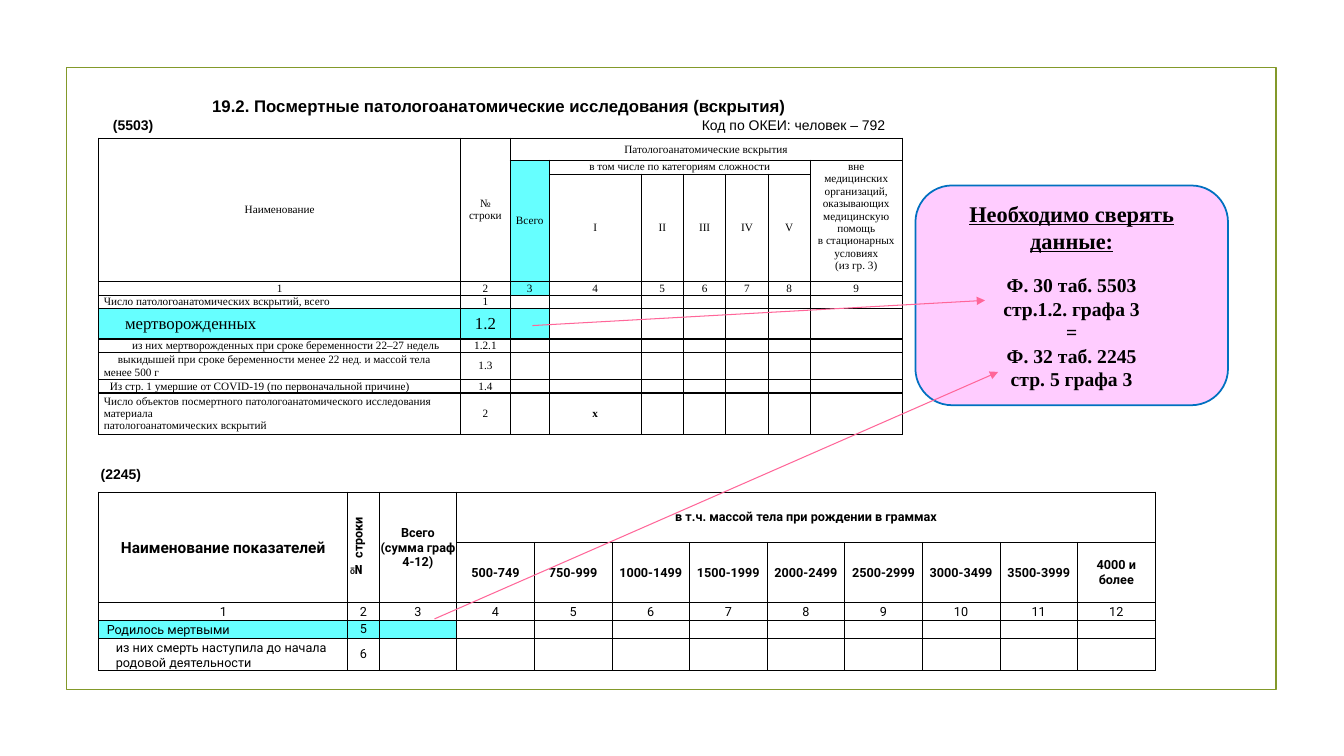
from pptx import Presentation
from pptx.dml.color import RGBColor
from pptx.enum.shapes import MSO_CONNECTOR, MSO_SHAPE
from pptx.enum.text import MSO_ANCHOR, PP_ALIGN
from pptx.oxml import parse_xml
from pptx.oxml.ns import nsdecls
from pptx.util import Inches, Pt

LEFT, CENTER = PP_ALIGN.LEFT, PP_ALIGN.CENTER
TOP, MIDDLE, BOTTOM = MSO_ANCHOR.TOP, MSO_ANCHOR.MIDDLE, MSO_ANCHOR.BOTTOM
RECTANGLE, ROUNDED = MSO_SHAPE.RECTANGLE, MSO_SHAPE.ROUNDED_RECTANGLE
STRAIGHT = MSO_CONNECTOR.STRAIGHT
BLACK, CYAN, PINK, ROSE = "000000", "66FFFF", "FFCCFF", "FF6699"
BLUE, OLIVE = "0070C0", "83992A"
SERIF, SANS, TABLE_SANS = "Times New Roman", "Arial", "Roboto"


def color(value):
    return RGBColor.from_string(value)


def add_element(parent, xml):
    tag, rest = xml[1:].split(" ", 1)
    parent.append(parse_xml(f"<{tag} {nsdecls('a')} {rest}"))


def write(para, text, size=8, font=SERIF, bold=False, underline=False,
          align=CENTER, indent=0, left=0, before=0):
    """Add one span of text to a paragraph and format both."""
    para.alignment = align
    if before:
        para.space_before = Pt(before)
    if indent or left:
        properties = para._p.get_or_add_pPr()
        properties.set("marL", str(Inches(left)))
        properties.set("indent", str(Inches(indent)))
    if not text:
        add_element(para._p, f'<a:endParaRPr sz="{size * 100}"/>')
        return
    span = para.add_run()
    span.text = text
    span.font.size, span.font.name = Pt(size), font
    span.font.bold, span.font.underline = bold, underline
    span.font.color.rgb = color(BLACK)


def add_text_box(page, box, wrap=True, insets=(0.1, 0.1)):
    frame = page.shapes.add_textbox(*map(Inches, box)).text_frame
    frame.word_wrap = wrap
    frame.vertical_anchor = MIDDLE
    frame.margin_left, frame.margin_right = map(Inches, insets)
    return frame


def add_panel(page, kind, box, line, fill=None):
    panel = page.shapes.add_shape(kind, *map(Inches, box))
    panel.shadow.inherit = False
    panel.line.color.rgb = color(line)
    panel.line.width = Pt(1.25)
    if fill:
        panel.fill.solid()
        panel.fill.fore_color.rgb = color(fill)
    else:
        panel.fill.background()
    return panel


def add_grid(page, origin, columns, rows, texts, merges, filled, styles,
             base, insets, border):
    """Draw a bordered table; styles override base by (row, column)."""
    box = (*origin, sum(columns), sum(rows))
    table = page.shapes.add_table(len(rows), len(columns), *map(Inches, box)).table
    table.first_row = table.horz_banding = False
    for column, width in zip(table.columns, columns):
        column.width = Inches(width)
    for row, height in zip(table.rows, rows):
        row.height = Inches(height)
    for r in range(len(rows)):
        for c in range(len(columns)):
            cell = table.cell(r, c)
            style = {**base, **styles.get((r, c), {})}
            cell.vertical_anchor = style.pop("anchor", MIDDLE)
            (cell.margin_left, cell.margin_top,
             cell.margin_right, cell.margin_bottom) = map(Inches, insets)
            properties = cell._tc.get_or_add_tcPr()
            if style.pop("vertical", False):
                properties.set("vert", "vert270")
            for side in "LRTB":
                add_element(properties, f'<a:ln{side} w="{Pt(border)}"><a:solidFill>'
                            f'<a:srgbClr val="{BLACK}"/></a:solidFill></a:ln{side}>')
            if (r, c) in filled:
                cell.fill.solid()
                cell.fill.fore_color.rgb = color(CYAN)
            else:
                cell.fill.background()
            frame = cell.text_frame
            for number, text in enumerate(texts.get((r, c), "").split("\n")):
                para = frame.add_paragraph() if number else frame.paragraphs[0]
                write(para, text, **style)
    for first, last in merges:
        table.cell(*first).merge(table.cell(*last))


def row_texts(row, start, values):
    return {(row, start + n): str(value) for n, value in enumerate(values)}


def draw_heading(page, box):
    frame = add_text_box(page, box, insets=(0.14, 0.17))
    write(frame.paragraphs[0], "19.2. Посмертные патологоанатомические исследования (вскрытия)",
          size=12, font=SANS, bold=True)
    para = frame.add_paragraph()
    add_element(para._p.get_or_add_pPr(),
                f'<a:tabLst ><a:tab pos="{Inches(box[2] - 0.31)}" algn="r"/></a:tabLst>')
    write(para, "(5503)", size=10, font=SANS, bold=True, align=LEFT)
    write(para, "\tКод по ОКЕИ: человек – 792", size=10, font=SANS, align=LEFT)


def draw_autopsy_table(page, origin):
    columns = [3.59, 0.49, 0.39, 0.91] + [0.42] * 4 + [0.91]
    rows = [0.22, 0.14, 1.06, 0.14, 0.13, 0.3, 0.13, 0.27, 0.13, 0.41]
    names = [
        ("Число патологоанатомических вскрытий, всего", "1", 0),
        ("мертворожденных", "1.2", 0.21),
        ("из них мертворожденных при сроке беременности 22–27 недель", "1.2.1", 0.28),
        ("выкидышей при сроке беременности менее 22 нед. и массой тела менее 500 г",
         "1.3", 0.14),
        ("Из стр. 1 умершие от COVID-19 (по первоначальной причине)", "1.4", 0.06),
        ("Число объектов посмертного патологоанатомического исследования материала\n"
         "патологоанатомических вскрытий", "2", 0),
    ]
    texts = {
        (0, 0): "Наименование", (0, 1): "№ строки", (0, 2): "Патологоанатомические вскрытия",
        (1, 2): "Всего", (1, 3): "в том числе по категориям сложности",
        (1, 8): "вне медицинских организаций, оказывающих медицинскую помощь\n"
                "в стационарных условиях\n(из гр. 3)",
        (9, 3): "х",
        **row_texts(2, 3, ["I", "II", "III", "IV", "V"]),
        **row_texts(3, 0, range(1, 10)),
    }
    styles = {(1, 3): {"anchor": TOP}, (1, 8): {"anchor": TOP}, (9, 3): {"bold": True}}
    for row, (name, number, indent) in enumerate(names, 4):
        texts.update(row_texts(row, 0, [name, number]))
        styles[row, 0] = {"align": LEFT, "indent": indent}
    styles[5, 0]["size"] = 12
    styles[5, 1] = {"size": 12}
    merges = [((0, 0), (2, 0)), ((0, 1), (2, 1)), ((0, 2), (0, 8)),
              ((1, 2), (2, 2)), ((1, 3), (1, 7)), ((1, 8), (2, 8))]
    filled = {(1, 2), (3, 2), (5, 0), (5, 1), (5, 2)}
    add_grid(page, origin, columns, rows, texts, merges, filled, styles,
             base={"size": 8, "font": SERIF}, insets=(0.05, 0, 0.05, 0), border=1)


def draw_birth_table(page, origin):
    columns = [2.47, 0.31] + [0.77] * 10
    rows = [0.5, 0.6, 0.17, 0.18, 0.32]
    weights = ["500-749", "750-999", "1000-1499", "1500-1999", "2000-2499",
               "2500-2999", "3000-3499", "3500-3999", "4000 и более"]
    texts = {
        **row_texts(0, 0, ["Наименование показателей", "№ строки", "Всего (сумма граф 4-12)",
                           "в т.ч. массой тела при рождении в граммах"]),
        **row_texts(1, 3, weights),
        **row_texts(2, 0, range(1, 13)),
        **row_texts(3, 0, ["Родилось мертвыми", 5]),
        **row_texts(4, 0, ["из них смерть наступила до начала родовой деятельности", 6]),
    }
    styles = {(r, c): {"bold": True} for r in range(2) for c in range(12)}
    styles[0, 0]["size"] = 11
    styles[0, 1]["vertical"] = True
    styles.update({(2, c): {"anchor": BOTTOM} for c in range(12) if c != 1})
    styles[3, 0] = {"align": LEFT, "left": 0.07, "anchor": BOTTOM}
    styles[4, 0] = {"align": LEFT, "left": 0.16, "anchor": BOTTOM}
    merges = [((0, c), (1, c)) for c in range(3)] + [((0, 3), (0, 11))]
    filled = {(3, c) for c in range(3)}
    add_grid(page, origin, columns, rows, texts, merges, filled, styles,
             base={"size": 9, "font": TABLE_SANS}, insets=(0.01, 0.01, 0.01, 0), border=0.5)


def draw_callout(page, box):
    frame = add_panel(page, ROUNDED, box, BLUE, PINK).text_frame
    frame.word_wrap = True
    frame.vertical_anchor = MIDDLE
    write(frame.paragraphs[0], "Необходимо сверять данные:", size=16, bold=True, underline=True)
    lines = ["Ф. 30 таб. 5503", "стр.1.2. графа 3", "=", "Ф. 32 таб. 2245", "стр. 5 графа 3"]
    for number, line in enumerate(lines):
        write(frame.add_paragraph(), line, size=14, bold=True, before=0 if number else 14)


def draw_arrow(page, start, end):
    arrow = page.shapes.add_connector(STRAIGHT, *map(Inches, (*start, *end)))
    arrow.line.color.rgb = color(ROSE)
    arrow.line.width = Pt(0.75)
    add_element(arrow.line._get_or_add_ln(), '<a:tailEnd type="triangle"/>')
    add_element(arrow._element.spPr, "<a:effectLst />")


def main():
    deck = Presentation()
    deck.slide_width, deck.slide_height = Inches(13.33), Inches(7.5)
    page = deck.slides.add_slide(deck.slide_layouts[6])
    add_panel(page, RECTANGLE, (0.66, 0.67, 12, 6.17), OLIVE)
    draw_heading(page, (0.98, 0.9, 7.97, 0.47))
    draw_autopsy_table(page, (0.98, 1.37))
    draw_birth_table(page, (0.98, 4.88))
    label = add_text_box(page, (0.9, 4.57, 0.64, 0.27), wrap=False)
    write(label.paragraphs[0], "(2245)", size=10, font=SANS, bold=True, align=LEFT)
    draw_callout(page, (9.08, 1.84, 3.1, 2.18))
    draw_arrow(page, (5.28, 3.23), (9.77, 2.98))
    draw_arrow(page, (4.31, 6.14), (9.9, 3.69))
    deck.save("out.pptx")


if __name__ == "__main__":
    main()
